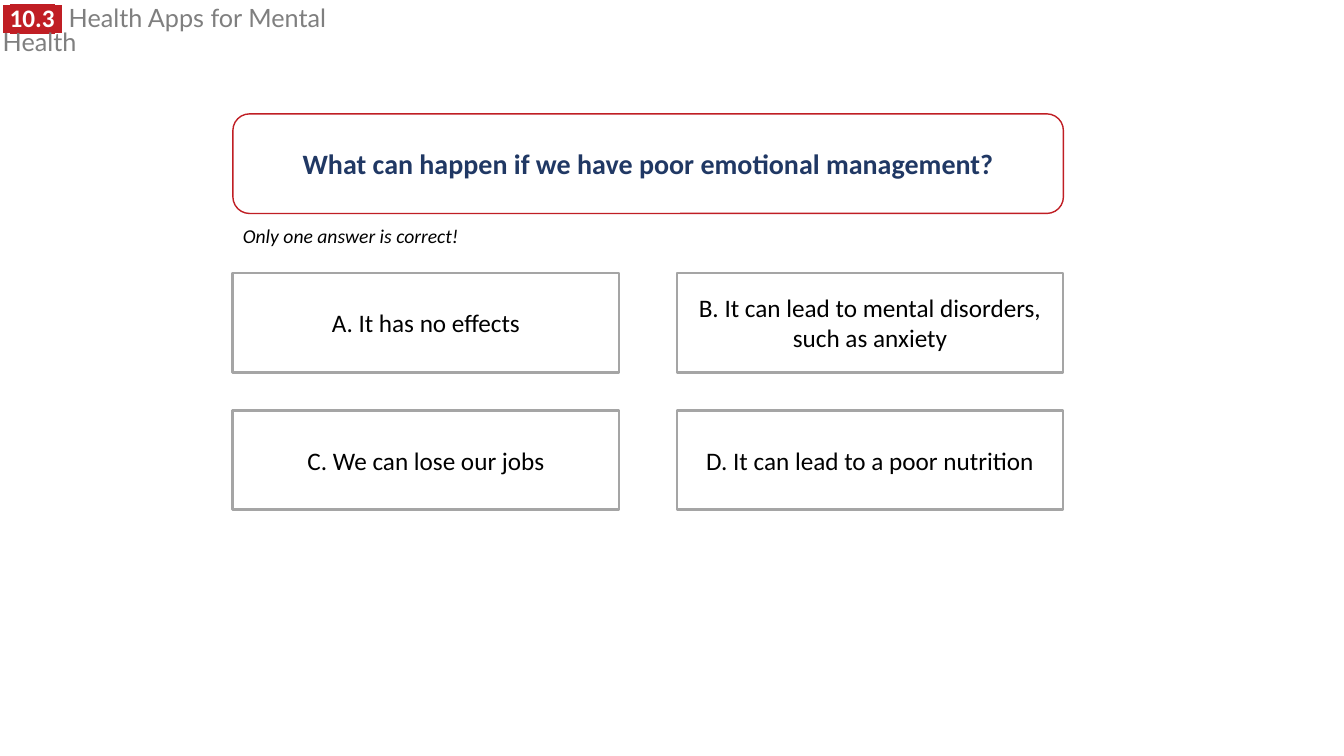
import dataclasses

import lxml.etree
import pptx
import pptx.dml.color
import pptx.enum.shapes
import pptx.enum.text
import pptx.oxml.ns
import pptx.util

Cm = pptx.util.Cm
Pt = pptx.util.Pt
MSO_SHAPE = pptx.enum.shapes.MSO_SHAPE


def rgb(value):
    return pptx.dml.color.RGBColor.from_string(value)


@dataclasses.dataclass(frozen=True)
class Theme:
    red: str = "C01E24"
    navy: str = "203864"
    grey: str = "7F7F7F"
    border: str = "A5A5A5"
    white: str = "FFFFFF"
    black: str = "000000"
    question_size: int = 20
    body_size: int = 18
    note_size: int = 14
    body_font: str = "Calibri"
    space_font: str = "Arial"
    title_font: str = "Lato"


class QuizSlide:
    def __init__(self, s, theme):
        self.s = s
        self.theme = theme

    def run(self, p, text, color, size, name=None, highlight=None, **formats):
        r = p.add_run()
        r.text = text
        r.font.color.rgb = rgb(color)
        if highlight:
            qn = pptx.oxml.ns.qn
            mark = lxml.etree.Element(qn("a:highlight"))
            lxml.etree.SubElement(mark, qn("a:srgbClr"), val=highlight)
            r.font._element.find(qn("a:solidFill")).addnext(mark)
        formats.update(size=Pt(size), name=name or self.theme.body_font)
        for key, value in formats.items():
            setattr(r.font, key, value)

    def text(self, left, top, width, height):
        sp = self.s.shapes.add_textbox(Cm(left), Cm(top), Cm(width), Cm(height))
        tf = sp.text_frame
        formats = {
            "word_wrap": True,
            "auto_size": pptx.enum.text.MSO_AUTO_SIZE.SHAPE_TO_FIT_TEXT,
        }
        for key, value in formats.items():
            setattr(tf, key, value)
        return tf.paragraphs[0]

    def card(self, kind, box, text, line, line_width, color, size, **formats):
        sp = self.s.shapes.add_shape(kind, *map(Cm, box))
        sp.shadow.inherit = False
        sp.fill.solid()
        sp.fill.fore_color.rgb = rgb(self.theme.white)
        sp.line.color.rgb = rgb(line)
        sp.line.width = Pt(line_width)
        tf = sp.text_frame
        tf.word_wrap = True
        tf.vertical_anchor = pptx.enum.text.MSO_ANCHOR.MIDDLE
        p = tf.paragraphs[0]
        p.alignment = pptx.enum.text.PP_ALIGN.CENTER
        self.run(p, text, color, size, **formats)

    def header(self, number, title):
        t = self.theme
        p = self.text(-0.18, 0.08, 9.88, 0.86)
        p.line_spacing = 0.8
        for text, name in ((" ", t.space_font), (number, t.body_font), (" ", t.space_font)):
            self.run(p, text, t.white, t.body_size, name, t.red, bold=True)
        for text, name in ((" ", t.space_font), (title, t.title_font)):
            self.run(p, text, t.grey, t.body_size, name)

    def question(self, text):
        t = self.theme
        box = (5.87, 2.87, 20.93, 2.51)
        self.card(MSO_SHAPE.ROUNDED_RECTANGLE, box, text, t.red, 1,
                  t.navy, t.question_size, bold=True)

    def note(self, text):
        t = self.theme
        p = self.text(5.87, 5.51, 5.99, 0.86)
        self.run(p, text, t.black, t.note_size, italic=True)

    def answers(self, texts):
        t = self.theme
        for i, text in enumerate(texts):
            row, col = divmod(i, 2)
            box = (5.87 + 11.19 * col, 6.88 + 3.46 * row, 9.73, 2.51)
            self.card(MSO_SHAPE.RECTANGLE, box, text, t.border, 2,
                      t.black, t.body_size)


def main():
    prs = pptx.Presentation()
    prs.slide_width = Cm(33.87)
    prs.slide_height = Cm(19.05)
    quiz = QuizSlide(prs.slides.add_slide(prs.slide_layouts[6]), Theme())
    quiz.header("10.3", "Health Apps for Mental Health")
    quiz.question("What can happen if we have poor emotional management?")
    quiz.note("Only one answer is correct!")
    quiz.answers([
        "A. It has no effects",
        "B. It can lead to mental disorders, such as anxiety",
        "C. We can lose our jobs",
        "D. It can lead to a poor nutrition",
    ])
    prs.save("out.pptx")


if __name__ == "__main__":
    main()
